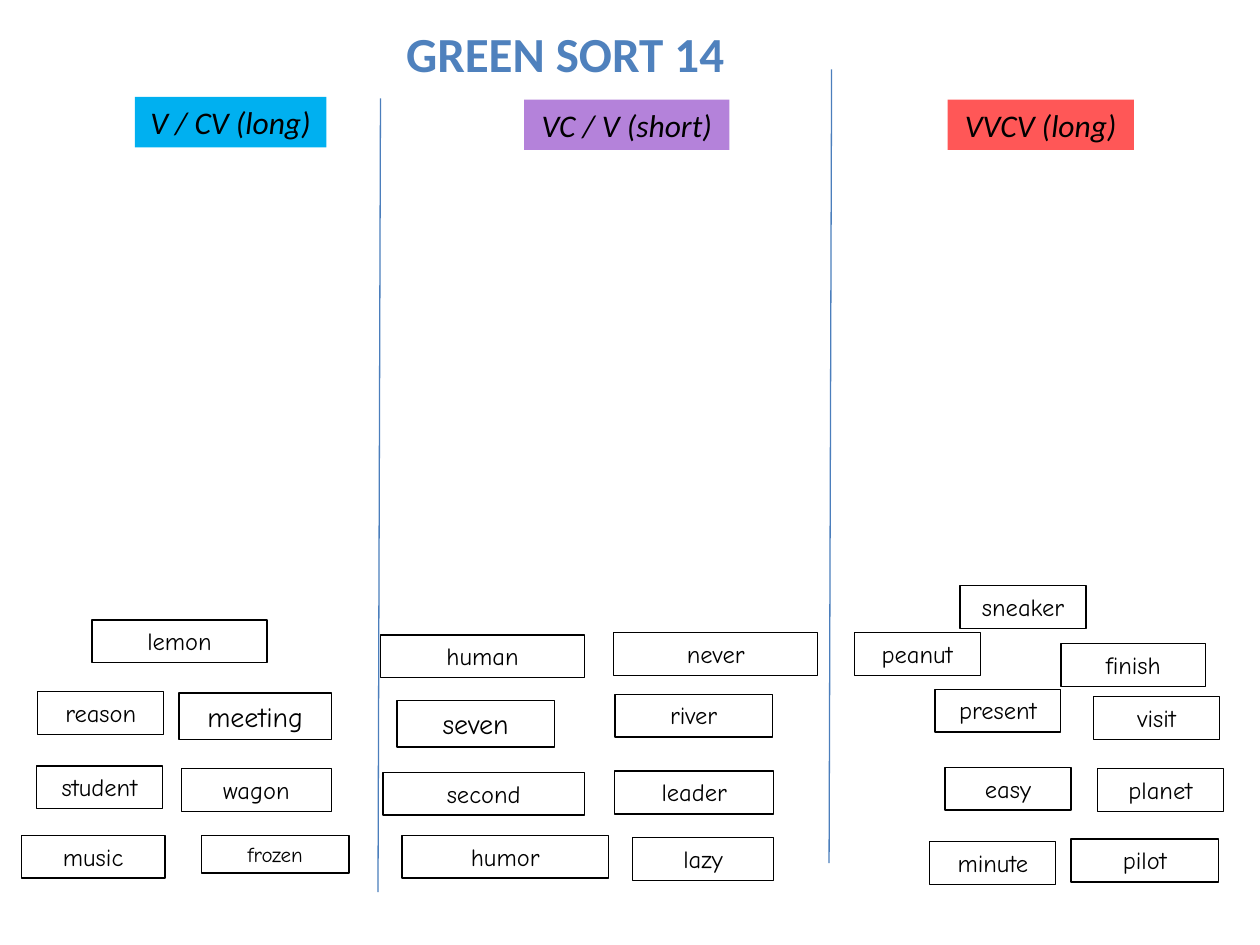
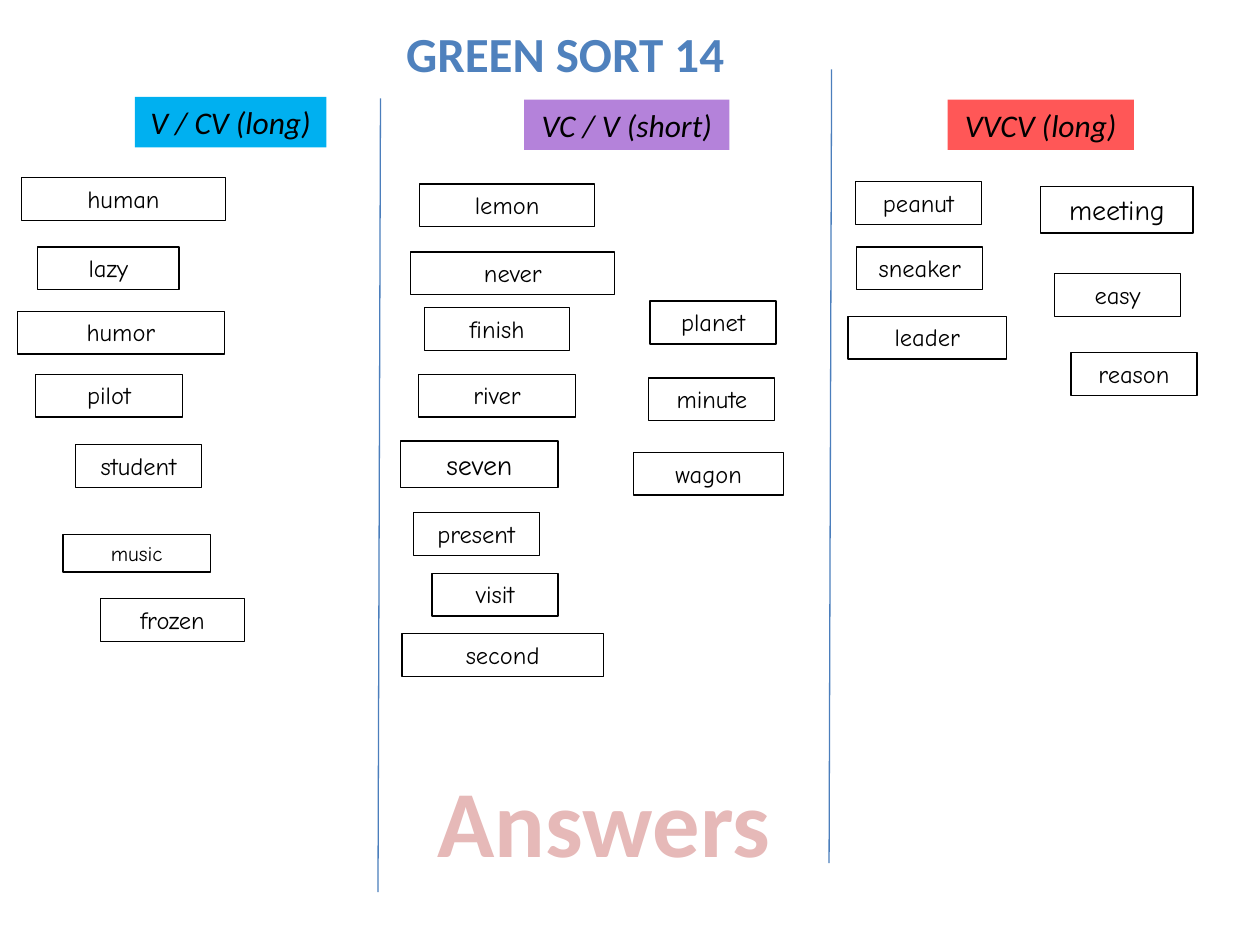
import pptx
import pptx.util
import pptx.dml.color
import pptx.enum.shapes
import pptx.enum.text
import pptx.oxml
import pptx.oxml.ns
from lxml import etree

Inches = pptx.util.Inches
Pt = pptx.util.Pt

BLACK = "000000"
TITLE_BLUE = "4F81BD"
DIVIDER_BLUE = "4B7EBC"
ANSWER_PINK = "E6B9B8"
ANSWER_RED = "C0504D"

HEADINGS = [
    ("V / CV (long)", 1.07, 0.77, 1.52, "00B0F0"),
    ("VC / V (short)", 4.16, 0.79, 1.63, "B482DA"),
    ("VVCV (long)", 7.52, 0.79, 1.48, "FF5757"),
]
DIVIDERS = [(3.02, 0.78, 3, 7.08), (6.6, 0.55, 6.58, 6.85)]

# Card width follows the word, card height follows the text size
CARD_WIDTHS = {
    "meeting": 1.21, "seven": 1.25, "second": 1.6, "river": 1.25,
    "humor": 1.64, "human": 1.62, "never": 1.62, "lazy": 1.12,
    "leader": 1.26, "wagon": 1.19, "lemon": 1.39, "pilot": 1.17,
    "finish": 1.15, "music": 1.14, "frozen": 1.14,
}
PLAIN_WIDTH = 1
SMALL_WIDTH = 1.17
CARD_HEIGHTS = {12: 0.3, 14: 0.34, 16: 0.37}
LARGE_WORDS = {"meeting", "seven"}

WORD_BANK = {
    "lemon": (0.73, 4.92), "reason": (0.3, 5.49), "meeting": (1.42, 5.5),
    "student": (0.29, 6.08), "wagon": (1.44, 6.1), "music": (0.17, 6.63),
    "frozen": (1.6, 6.63),
    "human": (3.02, 5.04), "never": (4.87, 5.02), "seven": (3.15, 5.56),
    "river": (4.88, 5.51), "second": (3.04, 6.13), "leader": (4.88, 6.12),
    "humor": (3.19, 6.63), "lazy": (5.02, 6.65),
    "sneaker": (7.62, 4.65), "peanut": (6.78, 5.02), "finish": (8.42, 5.11),
    "present": (7.42, 5.47), "visit": (8.68, 5.53), "easy": (7.5, 6.09),
    "planet": (8.71, 6.1), "minute": (7.38, 6.68), "pilot": (8.5, 6.66),
}
SORTED_WORDS = {
    "human": (0.17, 1.41), "lazy": (0.3, 1.96), "humor": (0.14, 2.47),
    "pilot": (0.28, 2.97), "student": (0.6, 3.53), "music": (0.5, 4.24),
    "frozen": (0.8, 4.75),
    "lemon": (3.33, 1.46), "never": (3.26, 2), "finish": (3.37, 2.44),
    "river": (3.32, 2.97), "seven": (3.18, 3.5), "present": (3.28, 4.07),
    "visit": (3.43, 4.55), "second": (3.19, 5.03),
    "planet": (5.16, 2.39), "minute": (5.15, 3), "wagon": (5.03, 3.59),
    "peanut": (6.79, 1.44), "sneaker": (6.8, 1.96), "leader": (6.73, 2.51),
    "meeting": (8.26, 1.48), "easy": (8.37, 2.17), "reason": (8.5, 2.8),
}


def rgb(color):
    return pptx.dml.color.RGBColor.from_string(color)


class SortDeck:
    """Holds the style of the word sort and the slide being filled."""

    heading_font = "Calibri"
    card_font = "Comic Neue"
    line_width = Pt(0.75)

    def __init__(self):
        self.prs = pptx.Presentation()
        self.prs.slide_width = Inches(10)
        self.prs.slide_height = Inches(7.5)
        self.s = None

    def set_text(self, sp, text, size, font, color, bold=False, italic=False, wrap=True):
        """Put one centred line into a shape and return its run."""
        tf = sp.text_frame
        tf.text = text
        tf.word_wrap = wrap
        tf.auto_size = pptx.enum.text.MSO_AUTO_SIZE.SHAPE_TO_FIT_TEXT
        tf.vertical_anchor = pptx.enum.text.MSO_ANCHOR.TOP
        p = tf.paragraphs[0]
        p.alignment = pptx.enum.text.PP_ALIGN.CENTER
        r = p.runs[0]
        r.font.size = Pt(size)
        r.font.name = font
        r.font.bold = bold
        r.font.italic = italic
        r.font.color.rgb = rgb(color)
        return r

    def rect(self, x, y, w, h, fill=None, line=None):
        sp = self.s.shapes.add_shape(
            pptx.enum.shapes.MSO_SHAPE.RECTANGLE,
            Inches(x), Inches(y), Inches(w), Inches(h))
        sp.shadow.inherit = False
        if fill:
            sp.fill.solid()
            sp.fill.fore_color.rgb = rgb(fill)
        else:
            sp.fill.background()
        if line:
            sp.line.color.rgb = rgb(line)
            sp.line.width = self.line_width
        else:
            sp.line.fill.background()
        return sp

    def heading(self, text, x, y, w, fill):
        sp = self.rect(x, y, w, 0.4, fill=fill)
        self.set_text(sp, text, 18, self.heading_font, BLACK, italic=True)

    def card(self, word, x, y, small):
        if small:
            size, w = 12, SMALL_WIDTH
        else:
            size = 16 if word in LARGE_WORDS else 14
            w = CARD_WIDTHS.get(word, PLAIN_WIDTH)
        sp = self.rect(x, y, w, CARD_HEIGHTS[size], line=BLACK)
        self.set_text(sp, word, size, self.card_font, BLACK)

    def divider(self, x1, y1, x2, y2):
        line = self.s.shapes.add_connector(
            pptx.enum.shapes.MSO_CONNECTOR.STRAIGHT,
            Inches(x1), Inches(y1), Inches(x2), Inches(y2))
        line.line.color.rgb = rgb(DIVIDER_BLUE)
        line.line.width = self.line_width
        etree.SubElement(line._element.spPr, pptx.oxml.ns.qn("a:effectLst"))

    def label(self, text, x, y, w, h, size, color, wrap=True):
        sp = self.s.shapes.add_textbox(Inches(x), Inches(y), Inches(w), Inches(h))
        return self.set_text(sp, text, size, self.heading_font, color, bold=True, wrap=wrap)

    def outline(self, r, color, width):
        """Draw a line around the letters of a run."""
        ln = pptx.oxml.parse_xml(
            f'<a:ln {pptx.oxml.ns.nsdecls("a")} w="{Pt(width)}"><a:solidFill>'
            f'<a:srgbClr val="{color}"/></a:solidFill></a:ln>')
        r._r.get_or_add_rPr().insert(0, ln)

    def sort_slide(self, cards, small_word):
        """Add a slide with the three columns and the given word cards."""
        self.s = self.prs.slides.add_slide(self.prs.slide_layouts[6])
        self.label("GREEN SORT 14", 2.18, 0.14, 4.61, 0.57, 28, TITLE_BLUE)
        for heading in HEADINGS:
            self.heading(*heading)
        for ends in DIVIDERS:
            self.divider(*ends)
        for word, (x, y) in cards.items():
            self.card(word, x, y, small=word == small_word)


def main():
    deck = SortDeck()
    deck.sort_slide(WORD_BANK, small_word="frozen")
    deck.sort_slide(SORTED_WORDS, small_word="music")
    answers = deck.label("Answers", 3.36, 6.01, 2.87, 1.01, 54, ANSWER_PINK, wrap=False)
    deck.outline(answers, ANSWER_RED, 1.75)
    deck.prs.save("out.pptx")


if __name__ == "__main__":
    main()
